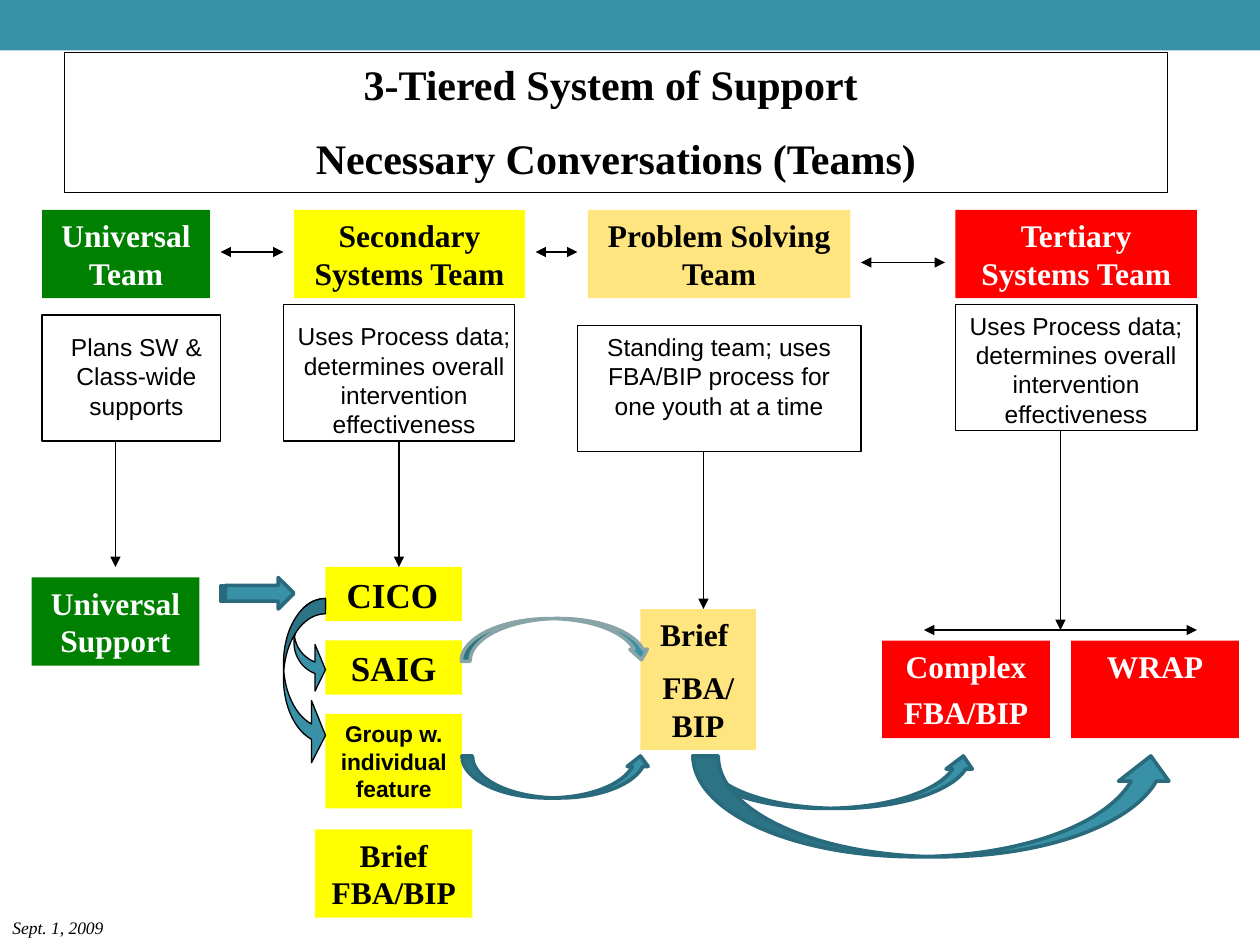
from lxml import etree
from pptx import Presentation
from pptx.dml.color import RGBColor
from pptx.enum import shapes, text
from pptx.oxml import ns
from pptx.util import Pt

SERIF, SANS = "Times New Roman", "Arial"
BLACK, WHITE, TEAL, DARK_TEAL = "000000", "FFFFFF", "3891A7", "296B7C"
GREEN, YELLOW, RED, AMBER = "008000", "FFFF00", "FF0000", "FFCC00"
CENTER, LEFT = text.PP_ALIGN.CENTER, text.PP_ALIGN.LEFT
KIND = shapes.MSO_SHAPE

deck = Presentation()
deck.slide_width, deck.slide_height = Pt(720), Pt(540)
page = deck.slides.add_slide(deck.slide_layouts[6])


def add_shape(kind, place, fill=None, line=None, width=0.75):
    shape = page.shapes.add_shape(kind, *map(Pt, place))
    shape.shadow.inherit = False
    if fill:
        shape.fill.solid()
        shape.fill.fore_color.rgb = RGBColor.from_string(fill)
    else:
        shape.fill.background()
    if line:
        shape.line.color.rgb = RGBColor.from_string(line)
        shape.line.width = Pt(width)
    else:
        shape.line.fill.background()
    return shape


def write(shape, lines, size, font=SERIF, color=BLACK, bold=True, italic=False,
          align=CENTER, gap=0):
    """Fill a shape with paragraphs, gap points apart."""
    frame = shape.text_frame
    frame.word_wrap = True
    frame.vertical_anchor = text.MSO_ANCHOR.TOP
    frame.text = "\n".join(lines)
    for index, paragraph in enumerate(frame.paragraphs):
        paragraph.alignment = align
        paragraph.space_before = Pt(gap if index else 0)
        paragraph.font.name = font
        paragraph.font.size = Pt(size)
        paragraph.font.bold = bold
        paragraph.font.italic = italic
        paragraph.font.color.rgb = RGBColor.from_string(color)


add_shape(KIND.RECTANGLE, (0, 0, 720, 28.8), TEAL)
title = add_shape(KIND.RECTANGLE, (37, 30, 630, 80), line=BLACK)
write(title, ["3-Tiered System of Support ", "Necessary Conversations (Teams)"], 24, gap=13.5)

# Teams and supports: place, fill, text colour, paragraphs, size, gap
boxes = [
    ((24, 120, 96, 50.4), GREEN, WHITE, ["Universal\vTeam"], 18, 0),
    ((168, 120, 132, 50.4), YELLOW, BLACK, ["Secondary Systems Team"], 18, 0),
    ((336, 120, 150, 50.4), AMBER, BLACK, ["Problem Solving Team"], 18, 0),
    ((546, 120, 138, 50.4), RED, WHITE, ["Tertiary Systems Team"], 18, 0),
    ((18, 330, 96, 50.4), GREEN, WHITE, ["Universal Support"], 18, 0),
    ((186, 324, 78, 31), YELLOW, BLACK, ["SAIG"], 20, 0),
    ((180, 474, 90, 50.4), YELLOW, BLACK, ["Brief FBA/BIP"], 18, 0),
    ((366, 348, 66, 80.6), AMBER, BLACK, ["Brief ", "FBA/BIP"], 18, 8.5),
    ((504, 366, 96, 55.8), RED, WHITE, ["Complex", "FBA/BIP"], 18, 5),
    ((612, 366, 96, 55.8), RED, WHITE, ["WRAP"], 18, 0),
]
boxes[5] = ((186, 366, 78, 31), *boxes[5][1:])
for place, fill, color, lines, size, gap in boxes:
    box = add_shape(KIND.RECTANGLE, place, fill)
    write(box, lines, size, color=color, gap=gap)
    if fill == AMBER:
        tint = box.fill._xPr.find(".//" + ns.qn("a:srgbClr"))
        etree.SubElement(tint, ns.qn("a:alpha"), val="50000")

cico = add_shape(KIND.RECTANGLE, (186, 324, 78, 31), YELLOW)
write(cico, [" CICO"], 20, align=LEFT)
group = add_shape(KIND.RECTANGLE, (186, 408, 78, 54), YELLOW)
write(group, ["Group w. individual", "feature"], 13, SANS)

# What each team does: frame place, text place, wording
process = "Uses Process data; determines overall intervention effectiveness"
roles = [
    ((24, 180, 102, 72), (30, 186, 96, 58), "Plans SW & Class-wide supports"),
    ((162, 174, 132, 78), (162, 180, 138, 75), process),
    ((330, 186, 162, 72), (336, 186, 150, 58),
     "Standing team; uses FBA/BIP process for one youth at a time"),
    ((546, 174, 138, 72), (546, 174, 138, 75), process),
]
for frame_place, text_place, wording in roles:
    add_shape(KIND.RECTANGLE, frame_place, line=BLACK)
    note = page.shapes.add_textbox(*map(Pt, text_place))
    write(note, [wording], 14, SANS, bold=False)

# Straight arrows: start, end; horizontal ones point both ways
arrows = [
    (126, 144, 162, 144), (306, 144, 330, 144), (492, 150, 540, 150), (528, 360, 684, 360),
    (66, 252, 66, 324), (228, 252, 228, 324), (402, 258, 402, 348), (606, 246, 606, 360),
]
for x1, y1, x2, y2 in arrows:
    arrow = page.shapes.add_connector(shapes.MSO_CONNECTOR.STRAIGHT, *map(Pt, (x1, y1, x2, y2)))
    arrow.line.color.rgb = RGBColor.from_string(BLACK)
    arrow.line.width = Pt(0.75)
    outline = arrow.line._get_or_add_ln()
    for end in ("a:headEnd", "a:tailEnd") if y1 == y2 else ("a:tailEnd",):
        etree.SubElement(outline, ns.qn(end), type="triangle")
    etree.SubElement(arrow._element.spPr, ns.qn("a:effectLst"))

for place in [(168, 342, 18, 54), (162, 342, 24, 96)]:
    curve = add_shape(KIND.CURVED_RIGHT_ARROW, place, TEAL, BLACK)
    for index, value in enumerate((0.363, 1.482, 0.333)):
        curve.adjustments[index] = value

add_shape(KIND.STRIPED_RIGHT_ARROW, (126, 330, 42, 18), TEAL, DARK_TEAL, 2.08)
for place in [(396, 432, 162, 30), (396, 432, 276, 57.6), (264, 432, 108, 24)]:
    add_shape(KIND.CURVED_UP_ARROW, place, TEAL, DARK_TEAL, 2.08)

arch = add_shape(KIND.CURVED_UP_ARROW, (263.5, 353.5, 108, 24), TEAL, "89A4A7", 2)
arch.rotation = 359.5
arch._element.spPr.xfrm.set("flipV", "1")
for index, value in enumerate((0.208, 0.417, 0.25)):
    arch.adjustments[index] = value

date = page.shapes.add_textbox(Pt(0), Pt(520.5), Pt(84), Pt(19.4))
write(date, ["Sept. 1, 2009"], 10, bold=False, italic=True, align=LEFT)

deck.save("out.pptx")
